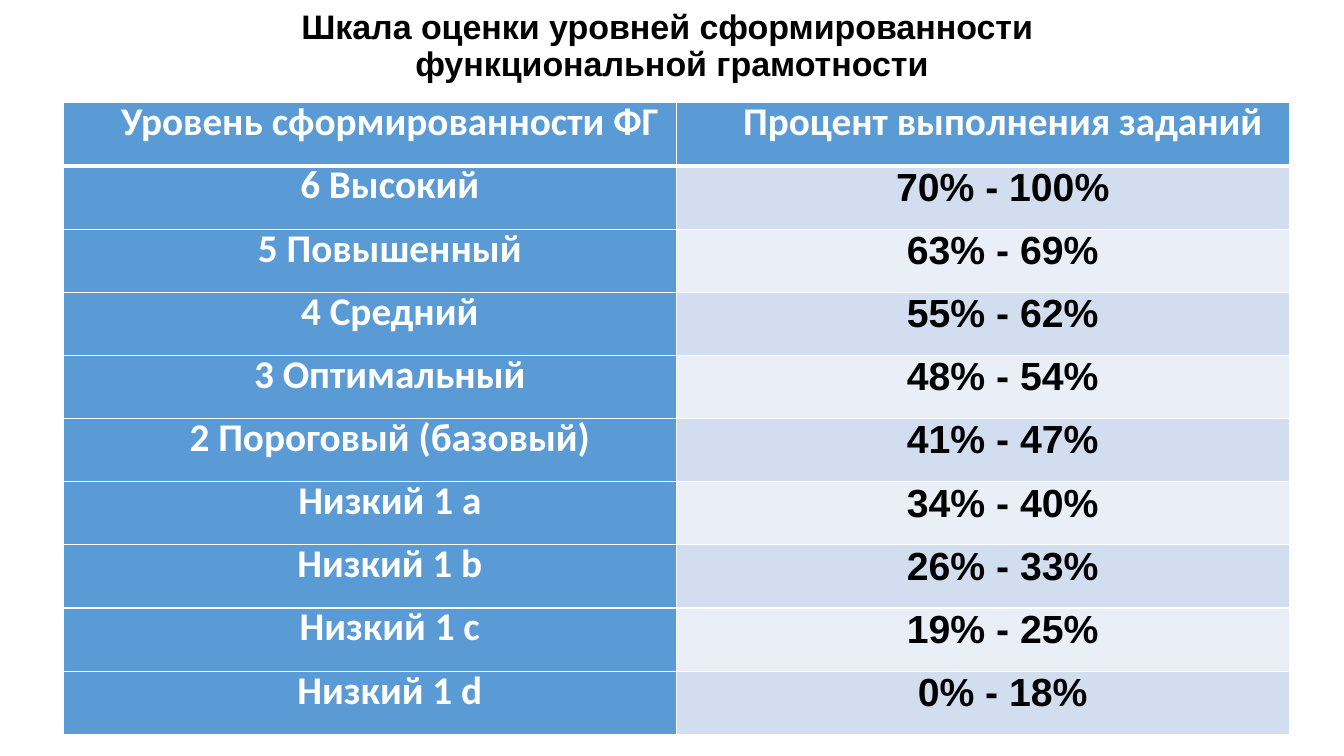
"""Build the slide with the functional literacy level scale."""
import pptx
import pptx.dml.color
import pptx.enum.text
import pptx.oxml
import pptx.oxml.ns
import pptx.util

Pt = pptx.util.Pt
RGBColor = pptx.dml.color.RGBColor

TITLE = "Шкала оценки уровней сформированности \vфункциональной грамотности"
ROWS = [
    ("Уровень сформированности ФГ", "Процент выполнения заданий"),
    ("6 Высокий", "70% - 100%"),
    ("5 Повышенный", "63% - 69%"),
    ("4 Средний", "55% - 62%"),
    ("3 Оптимальный", "48% - 54%"),
    ("2 Пороговый (базовый)", "41% - 47%"),
    ("Низкий 1 a", "34% - 40%"),
    ("Низкий 1 b", "26% - 33%"),
    ("Низкий 1 c", "19% - 25%"),
    ("Низкий 1 d", "0% - 18%"),
]

BLACK = RGBColor(0x00, 0x00, 0x00)
WHITE = RGBColor(0xFF, 0xFF, 0xFF)
BLUE = RGBColor(0x5B, 0x9B, 0xD5)
BANDS = (RGBColor(0xEA, 0xEF, 0xF7), RGBColor(0xD2, 0xDE, 0xEF))

TABLE_LEFT, TABLE_TOP = 45.5, 73.5
COLUMN_WIDTH, ROW_HEIGHT = 437.8, 45.1
FIRST_LINE_INDENT = 28


def format_runs(paragraph, font_name, size, color):
    for run in paragraph.runs:
        run.font.name = font_name
        run.font.size = Pt(size)
        run.font.bold = True
        run.font.color.rgb = color


def add_title(slide):
    title = slide.shapes.title
    title.left, title.top, title.width, title.height = Pt(66), Pt(4.5), Pt(828), Pt(58.3)
    frame = title.text_frame
    frame.text = TITLE
    frame.word_wrap = True
    frame.auto_size = pptx.enum.text.MSO_AUTO_SIZE.NONE
    frame.vertical_anchor = pptx.enum.text.MSO_ANCHOR.MIDDLE
    paragraph = frame.paragraphs[0]
    paragraph.alignment = pptx.enum.text.PP_ALIGN.CENTER
    paragraph.line_spacing = 0.9
    paragraph.space_before = Pt(0)
    format_runs(paragraph, "Arial", 24.3, BLACK)


def set_borders(cell, widths):
    properties = cell._tc.get_or_add_tcPr()
    for side, width in widths.items():
        properties.append(pptx.oxml.parse_xml(
            f'<a:ln{side} {pptx.oxml.ns.nsdecls("a")} w="{Pt(width)}">'
            f'<a:solidFill><a:srgbClr val="{WHITE}"/></a:solidFill></a:ln{side}>'))


def format_cell(cell, text, row, column):
    is_heading = row == 0 or column == 0
    set_borders(cell, {"L": 1, "R": 1, "T": 3 if row == 1 else 1, "B": 3 if row == 0 else 1})
    cell.fill.solid()
    cell.fill.fore_color.rgb = BLUE if is_heading else BANDS[row % 2]
    cell.margin_left = cell.margin_right = Pt(5)
    cell.margin_top = cell.margin_bottom = Pt(0)
    cell.vertical_anchor = pptx.enum.text.MSO_ANCHOR.MIDDLE
    cell.text_frame.text = text
    paragraph = cell.text_frame.paragraphs[0]
    paragraph.alignment = pptx.enum.text.PP_ALIGN.CENTER
    paragraph.line_spacing = Pt(17.1)
    paragraph.space_before = Pt(0.2)
    indents = paragraph._p.get_or_add_pPr()
    indents.set("marL", "0")
    indents.set("indent", str(Pt(FIRST_LINE_INDENT)))
    format_runs(paragraph, "Calibri" if is_heading else "Arial", 28, WHITE if is_heading else BLACK)


def add_scale_table(slide):
    column_count = len(ROWS[0])
    table = slide.shapes.add_table(
        len(ROWS), column_count, Pt(TABLE_LEFT), Pt(TABLE_TOP),
        Pt(COLUMN_WIDTH * column_count), Pt(ROW_HEIGHT * len(ROWS))).table
    table.first_col = True
    for row, texts in enumerate(ROWS):
        table.rows[row].height = Pt(ROW_HEIGHT)
        for column, text in enumerate(texts):
            format_cell(table.cell(row, column), text, row, column)


def main():
    presentation = pptx.Presentation()
    presentation.slide_width, presentation.slide_height = Pt(960), Pt(540)
    slide = presentation.slides.add_slide(presentation.slide_layouts.get_by_name("Title Only"))
    add_title(slide)
    add_scale_table(slide)
    presentation.save("out.pptx")


if __name__ == "__main__":
    main()
